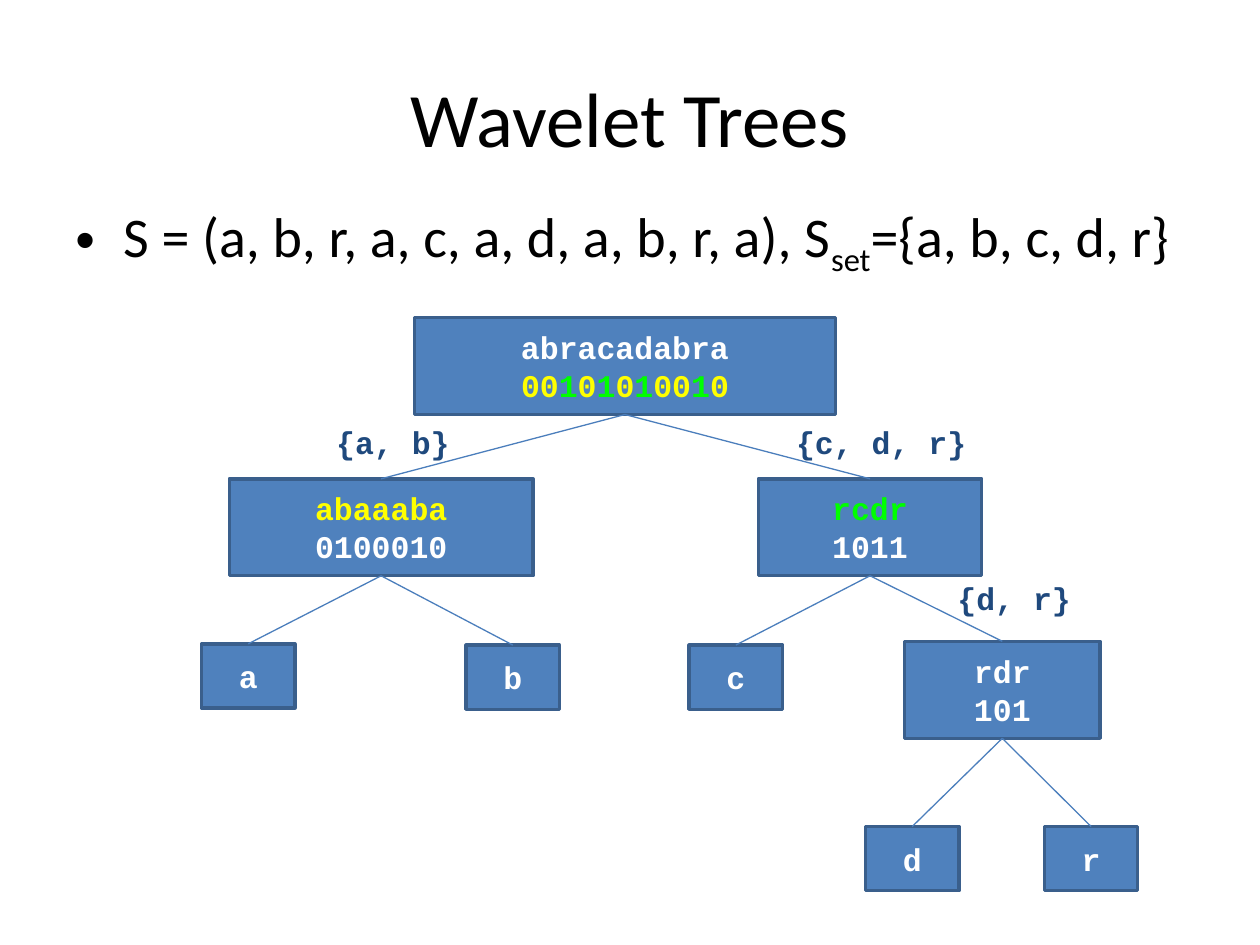
import itertools

import lxml.etree
import pptx
import pptx.dml.color
import pptx.enum.shapes
import pptx.enum.text
import pptx.oxml.ns
import pptx.util

Inches = pptx.util.Inches
Pt = pptx.util.Pt
RGBColor = pptx.dml.color.RGBColor
ALIGN = pptx.enum.text.PP_ALIGN
ANCHOR = pptx.enum.text.MSO_ANCHOR
qn = pptx.oxml.ns.qn

BLACK = RGBColor(0x00, 0x00, 0x00)
WHITE = RGBColor(0xFF, 0xFF, 0xFF)
YELLOW = RGBColor(0xFF, 0xFF, 0x00)
GREEN = RGBColor(0x00, 0xFF, 0x00)
NODE_FILL = RGBColor(0x4F, 0x81, 0xBD)
NODE_LINE = RGBColor(0x3A, 0x5F, 0x8C)
EDGE = RGBColor(0x4B, 0x7E, 0xBC)
NAVY = RGBColor(0x1F, 0x49, 0x7D)

BIT_COLORS = {"0": YELLOW, "1": GREEN}
ROOT_BITS = [("".join(g), BIT_COLORS[bit]) for bit, g in itertools.groupby("00101010010")]
NODE_H, LEAF_W, LEAF_H = 0.77, 0.74, 0.51

NODES = {
    "root": (1.69, 0, 3.34, NODE_H, [[("abracadabra", WHITE)], ROOT_BITS]),
    "ab": (0.22, 1.28, 2.41, NODE_H, [[("abaaaba", YELLOW)], [("0100010", WHITE)]]),
    "cdr": (4.42, 1.28, 1.77, NODE_H, [[("rcdr", GREEN)], [("1011", WHITE)]]),
    "dr": (5.58, 2.57, 1.55, NODE_H, [[("rdr", WHITE)], [("101", WHITE)]]),
}
LEAVES = {"a": (0, 2.59), "b": (2.1, 2.6), "c": (3.87, 2.6), "d": (5.27, 4.04), "r": (6.69, 4.04)}
CHILDREN = {"root": ("ab", "cdr"), "ab": ("a", "b"), "cdr": ("c", "dr"), "dr": ("d", "r")}
LABELS = [("{a, b}", 0.97, 0.79, 1.11), ("{c, d, r}", 4.62, 0.79, 1.57), ("{d, r}", 5.9, 2.03, 1.11)]


def write(tf, lines, *, size=18, font="Courier New", bold=True, align=ALIGN.LEFT,
          anchor=ANCHOR.TOP, wrap=True):
    """Write lines of (text, colour) runs as one paragraph and return it."""
    tf.word_wrap = wrap
    tf.vertical_anchor = anchor
    p = tf.paragraphs[0]
    p.alignment = align
    for i, line in enumerate(lines):
        if i:
            p.add_line_break()
        for text, color in line:
            r = p.add_run()
            r.text = text
            r.font.name = font
            r.font.size = Pt(size)
            r.font.bold = bold
            r.font.color.rgb = color
    return p


def add_title(s, x, y, w, h):
    """Place the slide title in its box."""
    tf = s.shapes.add_textbox(Inches(x), Inches(y), Inches(w), Inches(h)).text_frame
    write(tf, [[("Wavelet Trees", BLACK)]], size=44, font="Calibri", bold=False,
          align=ALIGN.CENTER, anchor=ANCHOR.MIDDLE)


def add_body(s, x, y, w, h):
    """Place the bulleted definition of the sequence and its symbol set."""
    tf = s.shapes.add_textbox(Inches(x), Inches(y), Inches(w), Inches(h)).text_frame
    texts = ("S = (a, b, r, a, c, a, d, a, b, r, a), S", "set", "={a, b, c, d, r}")
    p = write(tf, [[(text, BLACK) for text in texts]], size=32, font="Calibri", bold=False)
    p.space_before = Pt(6.4)
    p.runs[1].font._element.set("baseline", "-25000")
    pPr = p._p.get_or_add_pPr()
    pPr.set("marL", str(Inches(0.38)))
    pPr.set("indent", str(Inches(-0.38)))
    lxml.etree.SubElement(pPr, qn("a:buFont")).set("typeface", "Arial")
    lxml.etree.SubElement(pPr, qn("a:buChar")).set("char", "•")


def add_node(s, x, y, w, h, lines):
    """Draw one tree node and return its shape."""
    sp = s.shapes.add_shape(pptx.enum.shapes.MSO_SHAPE.RECTANGLE,
                            Inches(x), Inches(y), Inches(w), Inches(h))
    sp.shadow.inherit = False
    sp.fill.solid()
    sp.fill.fore_color.rgb = NODE_FILL
    sp.line.color.rgb = NODE_LINE
    sp.line.width = Pt(2)
    write(sp.text_frame, lines, align=ALIGN.CENTER, anchor=ANCHOR.MIDDLE)
    return sp


def add_edge(s, parent, child):
    """Join the bottom of a parent node to the top of its child."""
    cxn = s.shapes.add_connector(pptx.enum.shapes.MSO_CONNECTOR.STRAIGHT, 0, 0, 0, 0)
    cxn.begin_connect(parent, 2)
    cxn.end_connect(child, 0)
    cxn.line.color.rgb = EDGE
    cxn.line.width = Pt(0.75)
    lxml.etree.SubElement(cxn._element.spPr, qn("a:effectLst"))


def add_tree(s, x, y):
    """Draw the wavelet tree with its top left corner at x, y."""
    leaves = {k: (dx, dy, LEAF_W, LEAF_H, [[(k, WHITE)]]) for k, (dx, dy) in LEAVES.items()}
    shapes = {k: add_node(s, x + dx, y + dy, w, h, lines)
              for k, (dx, dy, w, h, lines) in (NODES | leaves).items()}
    for parent, children in CHILDREN.items():
        for child in children:
            add_edge(s, shapes[parent], shapes[child])
    for text, dx, dy, w in LABELS:
        box = s.shapes.add_textbox(Inches(x + dx), Inches(y + dy), Inches(w), Inches(0.4))
        write(box.text_frame, [[(text, NAVY)]], wrap=False)


def main():
    """Build the slide and save it."""
    prs = pptx.Presentation()
    prs.slide_width, prs.slide_height = Inches(10), Inches(7.5)
    s = prs.slides.add_slide(prs.slide_layouts[6])
    add_title(s, 0.5, 0.3, 9, 1.25)
    add_body(s, 0.5, 1.55, 9, 5.15)
    add_tree(s, 1.6, 2.52)
    prs.save("out.pptx")


if __name__ == "__main__":
    main()
